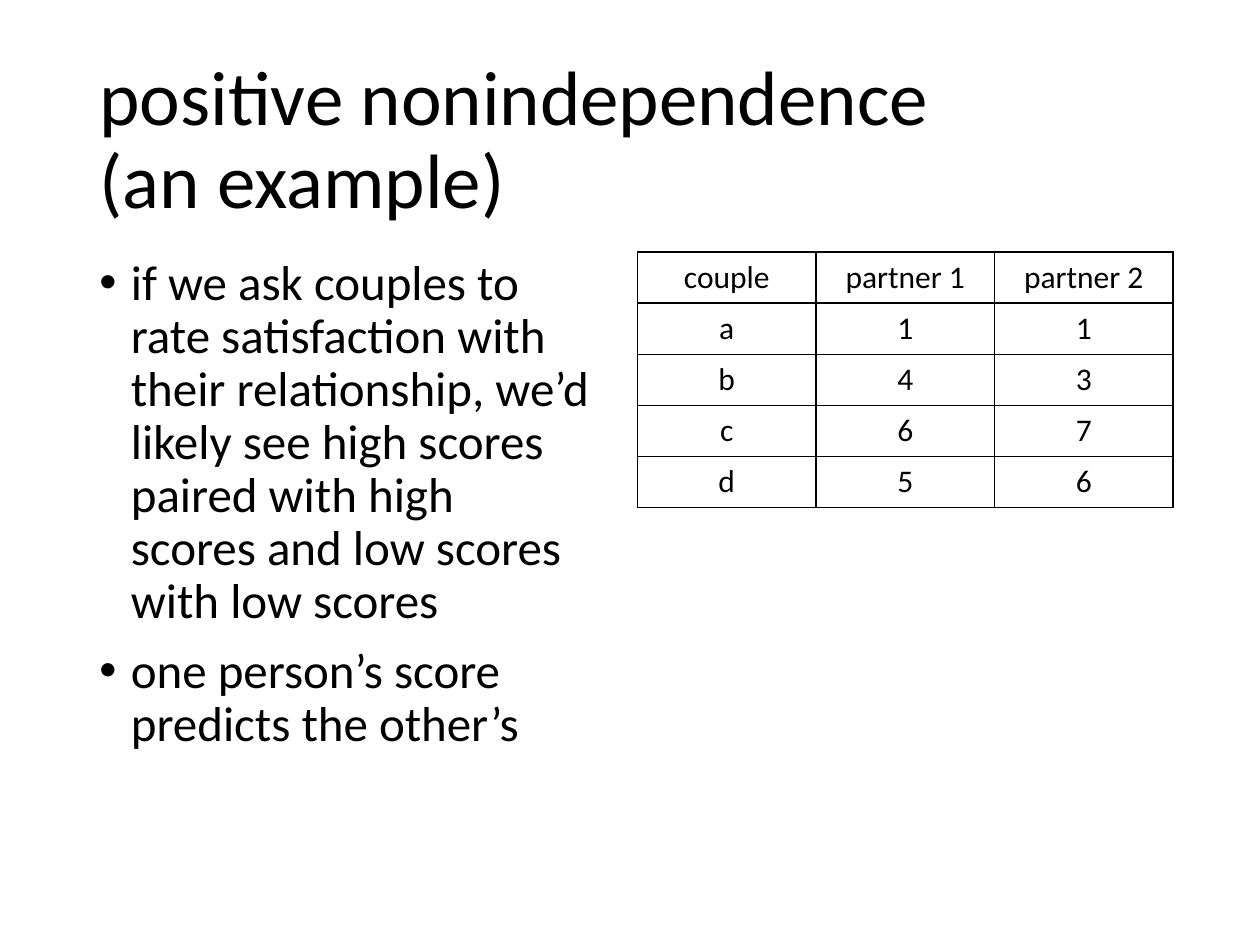
from dataclasses import dataclass

from lxml.etree import SubElement
from pptx import Presentation
from pptx.dml.color import RGBColor
from pptx.enum.text import MSO_ANCHOR, PP_ALIGN
from pptx.oxml.ns import qn
from pptx.util import Inches, Pt


@dataclass(frozen=True)
class Theme:
    font: str = "Calibri"
    ink: str = "000000"
    paper: str = "FFFFFF"
    title: int = 44
    body: int = 28
    cell: int = 18
    border: int = 1


def write(p, text, theme, size, align=PP_ALIGN.LEFT, spacing=None, before=0):
    """Fill a paragraph; a newline in the text becomes a line break."""
    p.text = text
    p.alignment = align
    p.space_before = Pt(before)
    if spacing:
        p.line_spacing = spacing
    for r in p.runs:
        r.font.name = theme.font
        r.font.size = Pt(size)
        r.font.color.rgb = RGBColor.from_string(theme.ink)


def add_bullet(p, indent=0.25):
    pPr = p._p.get_or_add_pPr()
    pPr.set("marL", str(Inches(indent)))
    pPr.set("indent", str(-Inches(indent)))
    SubElement(pPr, qn("a:buFont"), typeface="Arial")
    SubElement(pPr, qn("a:buChar"), char="•")


def add_borders(cell, color, width):
    tcPr = cell._tc.get_or_add_tcPr()
    for side in ("lnL", "lnR", "lnT", "lnB"):
        ln = SubElement(tcPr, qn(f"a:{side}"), w=str(Pt(width)))
        fill = SubElement(ln, qn("a:solidFill"))
        SubElement(fill, qn("a:srgbClr"), val=color)


class Builder:
    """Places elements by shares (x, y, width, height) of the slide."""

    def __init__(self, prs, theme):
        self.prs, self.theme = prs, theme
        self.s = prs.slides.add_slide(prs.slide_layouts[6])
        bg = self.s.background.fill
        bg.solid()
        bg.fore_color.rgb = RGBColor.from_string(theme.paper)

    def box(self, x, y, w, h):
        W, H = self.prs.slide_width, self.prs.slide_height
        return int(x * W), int(y * H), int(w * W), int(h * H)

    def text_frame(self, area, anchor):
        tf = self.s.shapes.add_textbox(*self.box(*area)).text_frame
        tf.word_wrap = True
        tf.vertical_anchor = anchor
        return tf

    def title(self, text, area):
        tf = self.text_frame(area, MSO_ANCHOR.MIDDLE)
        write(tf.paragraphs[0], text, self.theme, self.theme.title, spacing=0.9)

    def bullets(self, items, area):
        tf = self.text_frame(area, MSO_ANCHOR.TOP)
        for i, item in enumerate(items):
            p = tf.add_paragraph() if i else tf.paragraphs[0]
            write(p, item, self.theme, self.theme.body, spacing=0.9, before=10)
            add_bullet(p)

    def table(self, rows, area):
        sp = self.s.shapes.add_table(len(rows), len(rows[0]), *self.box(*area))
        table = sp.table
        table.first_row = table.horz_banding = False
        for i, row in enumerate(rows):
            for j, text in enumerate(row):
                cell = table.cell(i, j)
                write(cell.text_frame.paragraphs[0], text, self.theme,
                      self.theme.cell, align=PP_ALIGN.CENTER)
                add_borders(cell, self.theme.ink, self.theme.border)
                cell.fill.background()


def main():
    prs = Presentation()
    prs.slide_width, prs.slide_height = Inches(10), Inches(7.5)
    slide = Builder(prs, Theme())
    left, top = 0.069, 2 / 7.5

    # Heading
    slide.title("positive nonindependence\n(an example)",
                (left, 0.4 / 7.5, 1 - 2 * left, 1.45 / 7.5))

    # Explanation
    slide.bullets([
        "if we ask couples to rate satisfaction with their relationship, "
        "we’d likely see high scores paired with high scores and low scores "
        "with low scores",
        "one person’s score predicts the other’s",
    ], (left, top, 0.409, 4.76 / 7.5))

    # Ratings by couple
    slide.table([
        ("couple", "partner 1", "partner 2"),
        ("a", "1", "1"),
        ("b", "4", "3"),
        ("c", "6", "7"),
        ("d", "5", "6"),
    ], (0.506, top, 0.425, 2.03 / 7.5))

    prs.save("out.pptx")


if __name__ == "__main__":
    main()
